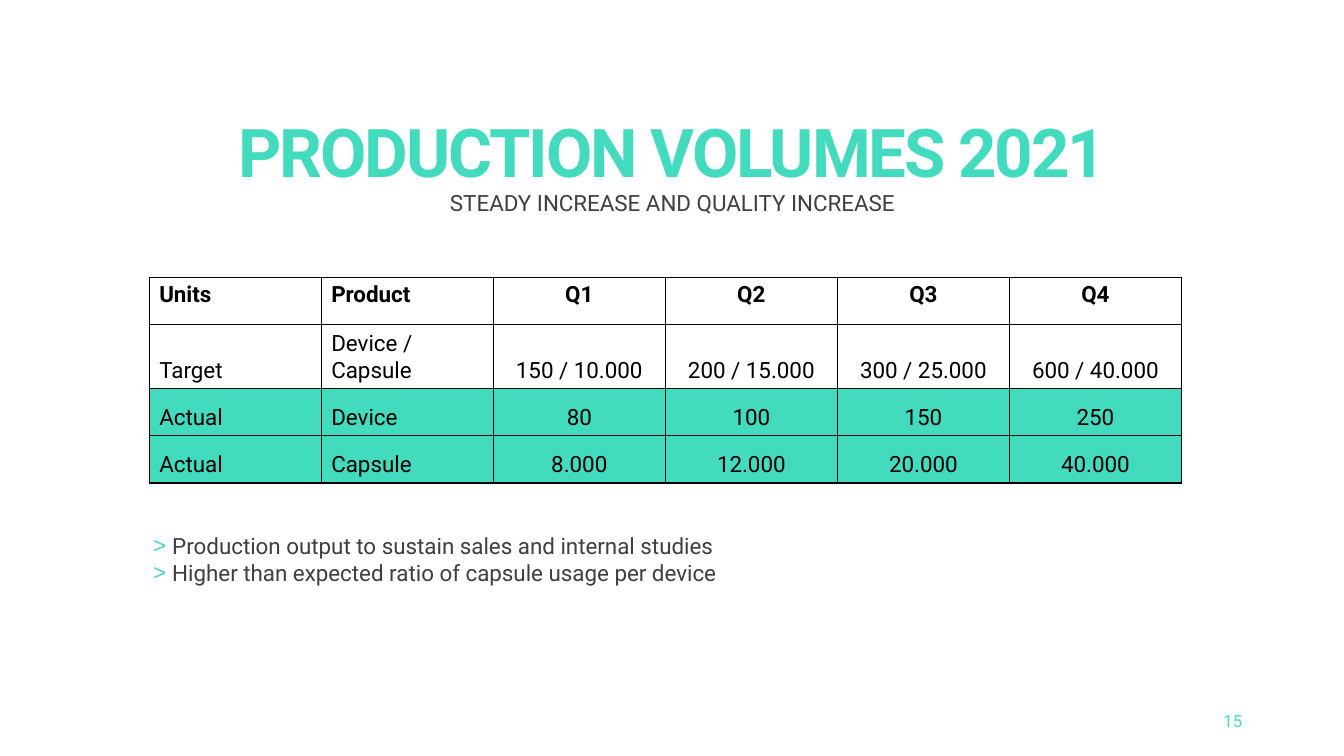
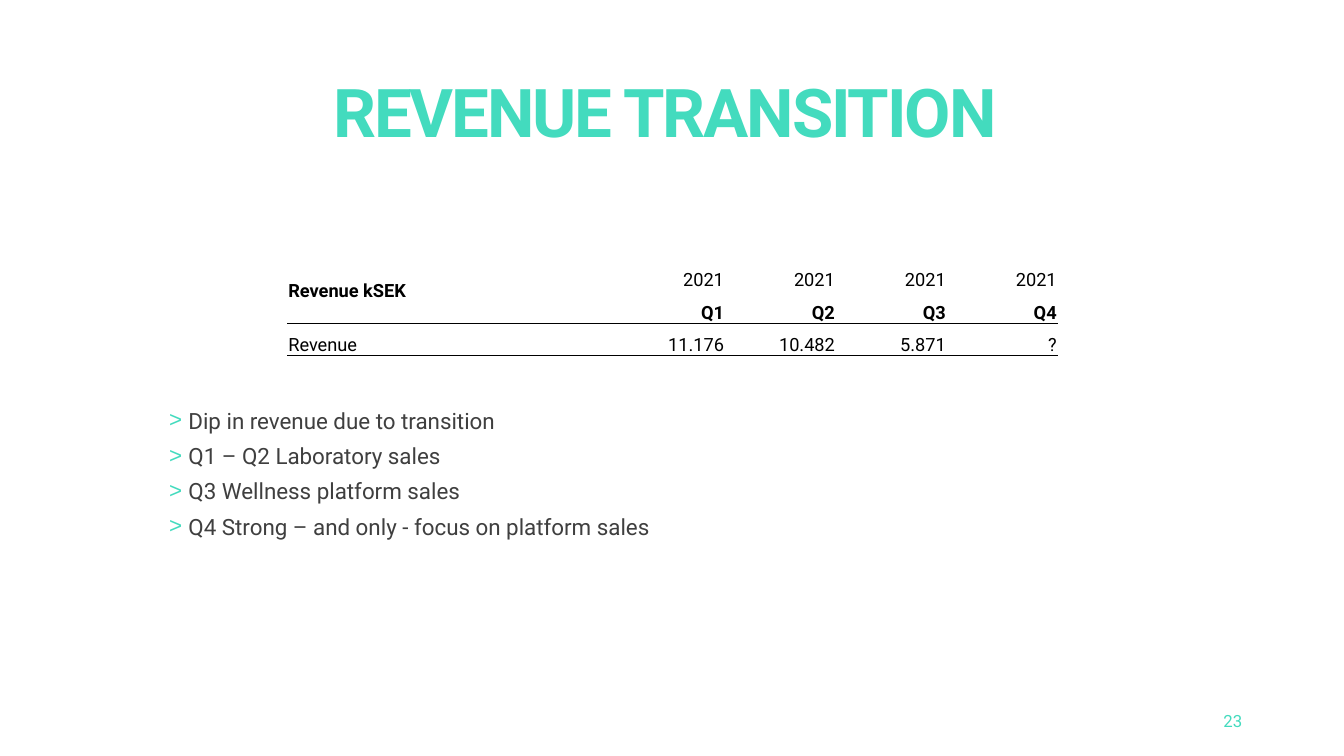
from dataclasses import dataclass

from lxml.etree import SubElement
from pptx import Presentation
from pptx.dml.color import RGBColor
from pptx.enum.text import MSO_ANCHOR, PP_ALIGN
from pptx.oxml import parse_xml
from pptx.oxml.ns import nsdecls, qn
from pptx.util import Inches, Pt


@dataclass(frozen=True)
class Theme:
    font: str = "Roboto"
    bullet_font: str = "Arial"
    accent: str = "43DBBE"
    body: str = "3F3F3F"
    black: str = "000000"
    white: str = "FFFFFF"
    title_size: int = 48
    text_size: int = 16
    small_table_size: int = 13
    number_size: int = 12


THEME = Theme()
NO_STYLE_NO_GRID = "{2D5ABB26-0587-4C30-8999-92F81FD0307C}"

VOLUMES = [
    ("Units", "Product", "Q1", "Q2", "Q3", "Q4"),
    ("Target", "Device / Capsule", "150 / 10.000", "200 / 15.000", "300 / 25.000", "600 / 40.000"),
    ("Actual", "Device", "80", "100", "150", "250"),
    ("Actual", "Capsule", "8.000", "12.000", "20.000", "40.000"),
]
VOLUME_NOTES = [
    "Production output to sustain sales and internal studies",
    "Higher than expected ratio of capsule usage per device",
]
REVENUE = [
    ("Revenue kSEK", "2021", "2021", "2021", "2021"),
    ("", "Q1", "Q2", "Q3", "Q4"),
    ("Revenue", "11.176", "10.482", "5.871", "?"),
]
REVENUE_NOTES = [
    "Dip in revenue due to transition",
    "Q1 – Q2 Laboratory sales",
    "Q3 Wellness platform sales",
    "Q4 Strong – and only - focus on platform sales",
]


def add_run(para, text, size, color, bold=False):
    span = para.add_run()
    span.text = text
    span.font.name = THEME.font
    span.font.size = Pt(size)
    span.font.bold = bold
    span.font.color.rgb = RGBColor.from_string(color)
    return span


def add_box(page, left, top, width, height):
    box = page.shapes.add_textbox(Inches(left), Inches(top), Inches(width), Inches(height))
    box.text_frame.word_wrap = True
    box.text_frame.vertical_anchor = MSO_ANCHOR.MIDDLE
    return box.text_frame


def add_page(deck, title, title_top, number, subtitle=None):
    """Add a blank page with the shared title style and page number."""
    page = deck.slides.add_slide(deck.slide_layouts[6])

    para = add_box(page, 9.42, 6.95, 3, 0.4).paragraphs[0]
    para.alignment = PP_ALIGN.RIGHT
    add_run(para, str(number), THEME.number_size, THEME.accent)

    para = add_box(page, 0.92, title_top, 11.5, 1.45).paragraphs[0]
    para.alignment = PP_ALIGN.CENTER
    para.line_spacing = 0.9
    heading = add_run(para, title, THEME.title_size, THEME.accent, bold=True)
    heading.font._element.set("spc", "-150")
    if subtitle:
        para.add_line_break()
        add_run(para, subtitle, THEME.text_size, THEME.body)
    return page


def add_bullets(page, lines, left, top, width, height, space_before=0):
    frame = add_box(page, left, top, width, height)
    for index, line in enumerate(lines):
        para = frame.paragraphs[0] if index == 0 else frame.add_paragraph()
        para.space_before = Pt(space_before)
        add_run(para, line, THEME.text_size, THEME.body)
        properties = para._p.get_or_add_pPr()
        properties.set("marL", str(Inches(0.19)))
        properties.set("indent", str(-Inches(0.19)))
        color = SubElement(properties, qn("a:buClr"))
        SubElement(color, qn("a:srgbClr"), val=THEME.accent)
        SubElement(properties, qn("a:buFont"), typeface=THEME.bullet_font)
        SubElement(properties, qn("a:buChar"), char=">")


def add_plain_table(page, rows, left, top, column_widths, row_height):
    """Add an unstyled table of the right size; its cells are still empty."""
    frame = page.shapes.add_table(
        len(rows), len(column_widths), Inches(left), Inches(top),
        Inches(sum(column_widths)), Inches(row_height * len(rows)))
    table = frame.table
    table.first_row = table.horz_banding = False
    table._tbl.tblPr.find(qn("a:tableStyleId")).text = NO_STYLE_NO_GRID
    for column, width in zip(table.columns, column_widths):
        column.width = Inches(width)
    for row in table.rows:
        row.height = Inches(row_height)
    return table


def set_borders(cell, **widths):
    """Draw black borders; widths in points are keyed by side: L, R, T, B."""
    properties = cell._tc.get_or_add_tcPr()
    drawn = [side for side in "LRTB" if side in widths]
    for index, side in enumerate(drawn):
        properties.insert(index, parse_xml(
            f'<a:ln{side} {nsdecls("a")} w="{Pt(widths[side])}"><a:solidFill>'
            f'<a:srgbClr val="{THEME.black}"/></a:solidFill></a:ln{side}>'))


def fill_cell(cell, text, size, bold, align, anchor, fill):
    cell.vertical_anchor = anchor
    cell.fill.solid()
    cell.fill.fore_color.rgb = RGBColor.from_string(fill)
    para = cell.text_frame.paragraphs[0]
    para.alignment = align
    if text:
        add_run(para, text, size, THEME.black, bold)


def add_volume_table(page):
    table = add_plain_table(page, VOLUMES, 1.48, 2.75, [10.24 / 6] * 6, 0.47)
    for row, values in enumerate(VOLUMES):
        header = row == 0
        for column, text in enumerate(values):
            cell = table.cell(row, column)
            fill_cell(cell, text, THEME.text_size, header,
                      PP_ALIGN.LEFT if column < 2 else PP_ALIGN.CENTER,
                      MSO_ANCHOR.TOP if header else MSO_ANCHOR.BOTTOM,
                      THEME.accent if values[0] == "Actual" else THEME.white)
            set_borders(cell, L=1, R=1, T=1, B=1)


def add_revenue_table(page):
    table = add_plain_table(page, REVENUE, 2.85, 2.57, [3.24] + [1.1] * 4, 0.32)
    borders = [{}, {"B": 1}, {"T": 1, "B": 0.5}]
    for row, values in enumerate(REVENUE):
        for column, text in enumerate(values):
            cell = table.cell(row, column)
            cell.margin_left = cell.margin_right = cell.margin_top = Inches(0.01)
            cell.margin_bottom = 0
            label = column == 0
            fill_cell(cell, text, THEME.small_table_size,
                      row == 1 or (label and row == 0),
                      PP_ALIGN.LEFT if label else PP_ALIGN.RIGHT,
                      MSO_ANCHOR.MIDDLE if label and row < 2 else MSO_ANCHOR.BOTTOM,
                      THEME.white)
            set_borders(cell, **borders[1 if label and row == 0 else row])
    table.cell(0, 0).merge(table.cell(1, 0))


def main():
    deck = Presentation()
    deck.slide_width, deck.slide_height = Inches(13.33), Inches(7.5)

    page = add_page(deck, "PRODUCTION VOLUMES 2021", 0.94, 15,
                    "STEADY INCREASE AND QUALITY INCREASE")
    add_volume_table(page)
    add_bullets(page, VOLUME_NOTES, 1.42, 5.23, 7.2, 0.64)

    page = add_page(deck, "REVENUE TRANSITION ", 0.42, 23)
    add_revenue_table(page)
    add_bullets(page, REVENUE_NOTES, 1.58, 3.98, 6.01, 1.43, space_before=6)

    deck.save("out.pptx")


if __name__ == "__main__":
    main()
